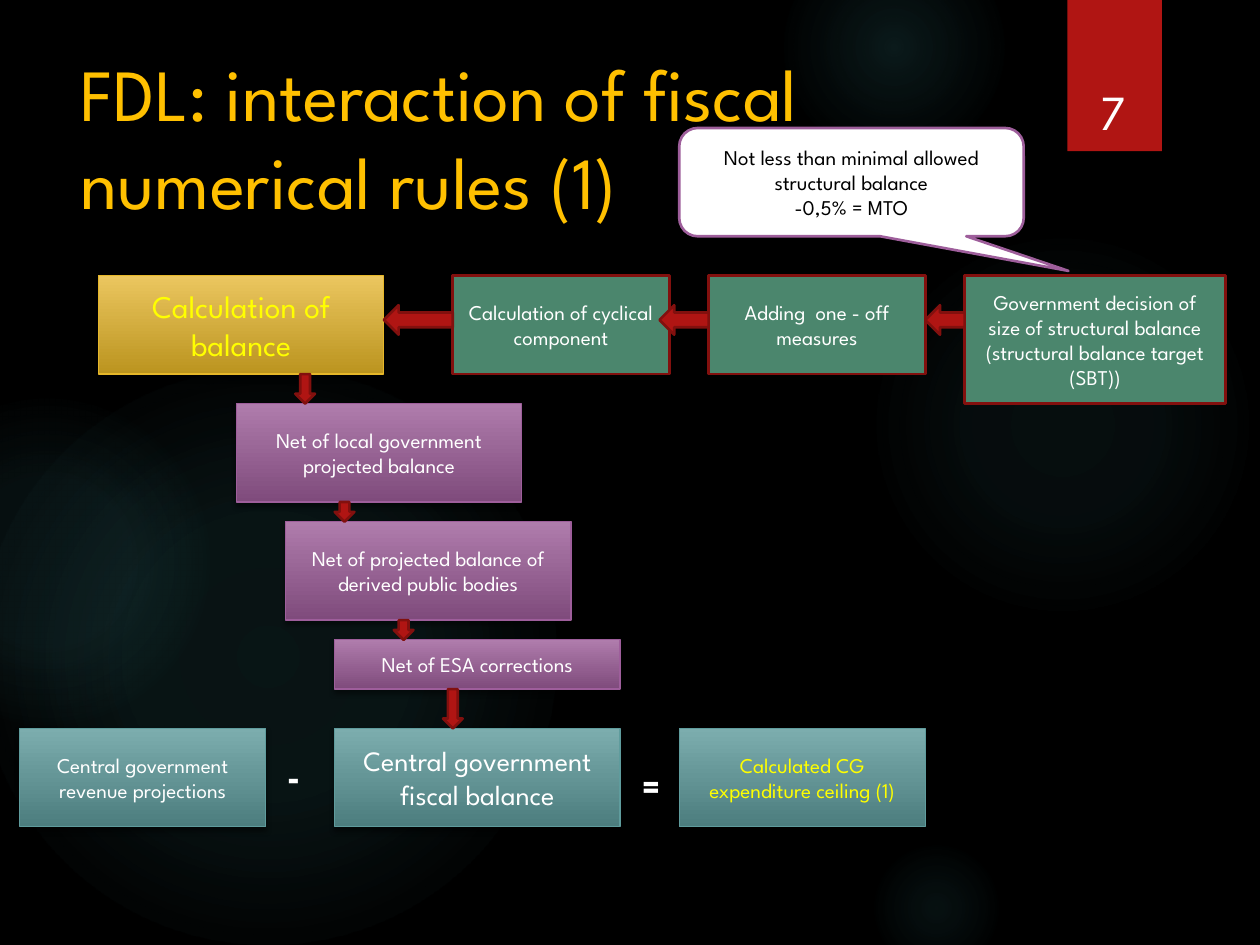
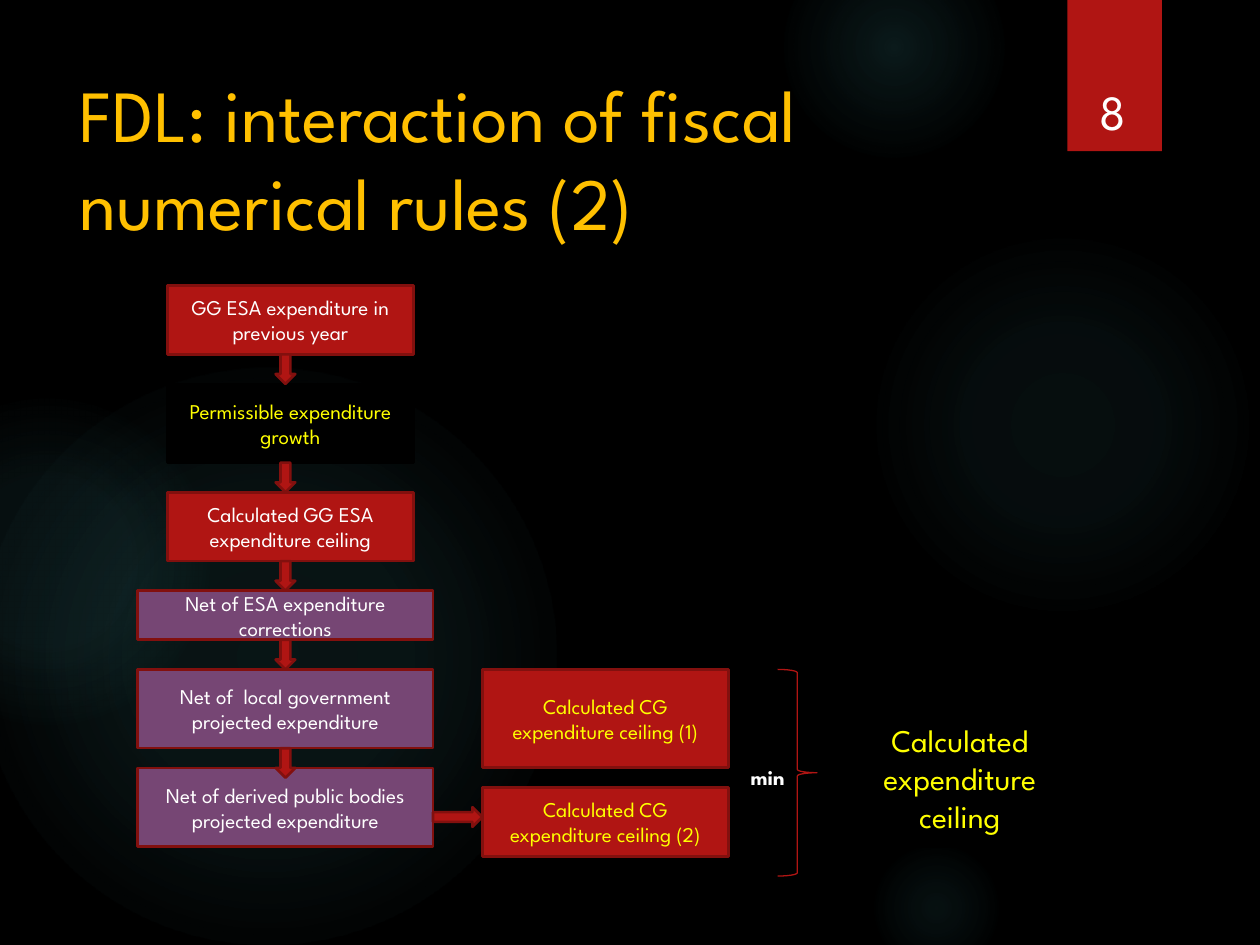
from lxml import etree
from pptx import Presentation
from pptx.dml.color import RGBColor
from pptx.enum.shapes import MSO_SHAPE
from pptx.enum.text import MSO_ANCHOR, PP_ALIGN
from pptx.oxml import parse_xml
from pptx.oxml.ns import nsdecls, qn
from pptx.util import Pt

RECT, OVAL = MSO_SHAPE.RECTANGLE, MSO_SHAPE.OVAL
CALLOUT, BRACE = MSO_SHAPE.ROUNDED_RECTANGULAR_CALLOUT, MSO_SHAPE.RIGHT_BRACE
LEFT_ARROW, RIGHT_ARROW = MSO_SHAPE.LEFT_ARROW, MSO_SHAPE.RIGHT_ARROW
DOWN_ARROW = MSO_SHAPE.DOWN_ARROW
LEFT, CENTER = PP_ALIGN.LEFT, PP_ALIGN.CENTER
TOP, MIDDLE, BOTTOM = MSO_ANCHOR.TOP, MSO_ANCHOR.MIDDLE, MSO_ANCHOR.BOTTOM

FONT = "League Spartan"
BLACK = RGBColor(0x00, 0x00, 0x00)
WHITE = RGBColor(0xFF, 0xFF, 0xFF)
YELLOW = RGBColor(0xFF, 0xFF, 0x00)
AMBER = RGBColor(0xFF, 0xC0, 0x00)
RED = RGBColor(0xB0, 0x15, 0x13)
DARK_RED = RGBColor(0x82, 0x10, 0x0E)
GREEN = RGBColor(0x4B, 0x86, 0x6D)
PLUM = RGBColor(0x76, 0x46, 0x74)
PURPLE = RGBColor(0x9E, 0x5E, 0x9B)
LIGHT_PURPLE = RGBColor(0xAF, 0x7C, 0xAC)
DEEP_PURPLE = RGBColor(0x7F, 0x4B, 0x7C)
GOLD = RGBColor(0xE6, 0xB7, 0x29)
LIGHT_GOLD = RGBColor(0xEB, 0xC6, 0x5F)
DEEP_GOLD = RGBColor(0xBB, 0x94, 0x1F)
TEAL = RGBColor(0x5F, 0x9C, 0x9D)
LIGHT_TEAL = RGBColor(0x7C, 0xAD, 0xAE)
DEEP_TEAL = RGBColor(0x4C, 0x7D, 0x7E)
GLOW = RGBColor(0x50, 0xB9, 0xC1)

# Style: fill (one colour, or top and bottom of a gradient), line, line width
STYLES = {
    "gold": ((LIGHT_GOLD, DEEP_GOLD), GOLD, 0.75),
    "purple": ((LIGHT_PURPLE, DEEP_PURPLE), PURPLE, 0.75),
    "teal": ((LIGHT_TEAL, DEEP_TEAL), TEAL, 0.75),
    "green": ((GREEN,), DARK_RED, 1.5),
    "red": ((RED,), DARK_RED, 1.5),
    "plum": ((PLUM,), DARK_RED, 1.5),
    "black": ((BLACK,), BLACK, 1.5),
    "white": ((WHITE,), PURPLE, 1.5),
}

# Glow: left, top, diameter, then (position, opacity) stops in percent
GLOWS = [
    (496.13, 131.63, 222, ((0, 7), (36, 6), (69, 0))),
    (448, -36, 126, ((0, 14), (36, 7), (73, 0))),
    (496.13, 480, 78, ((0, 9), (36, 5), (66, 0))),
    (-12, 210, 330, ((0, 11), (36, 10), (75, 0))),
    (-66, 228, 186, ((0, 8), (36, 8), (72, 0))),
]

ROW_TOP, BOX_H, BOX_W = 157.5, 56.25, 163.13
CEILING_W, SUM_TOP = 140.63, 416.25

# Box: text, style, left, top, width, height, size, text colour
BALANCE_ROW = [
    ("Calculation of balance", "gold", 56.25, ROW_TOP, BOX_W, BOX_H, 18, YELLOW),
    ("Calculation of cyclical component", "green", 258.75, ROW_TOP, 123.75, BOX_H, 12, WHITE),
    ("Adding  one - off measures", "green", 405, ROW_TOP, 123.75, BOX_H, 12, WHITE),
    ("Government decision of size of structural balance\n(structural balance target (SBT))",
     "green", 551.25, ROW_TOP, 149, 73.13, 12, WHITE),
]
NET_STEPS = [
    ("Net of local government projected balance", "purple", 135, 230.63, BOX_W, BOX_H, 12, WHITE),
    ("Net of projected balance of derived public bodies", "purple",
     163.13, 298.13, BOX_W, BOX_H, 12, WHITE),
    ("Net of ESA corrections", "purple", 191.25, 365.63, BOX_W, 28.13, 12, WHITE),
    ("Central government fiscal balance", "teal", 191.25, SUM_TOP, BOX_W, BOX_H, 16, WHITE),
]
SUM_BOXES = [
    ("Central government revenue projections", "teal",
     11.25, SUM_TOP, CEILING_W, BOX_H, 12, WHITE),
    ("Calculated CG expenditure ceiling (1)", "teal",
     388.13, SUM_TOP, CEILING_W, BOX_H, 12, YELLOW),
]
SIGNS = [("-", 157.5, 427.5), ("=", 360, 433.13)]
MTO_NOTE = "Not less than minimal allowed structural balance\n-0,5% = MTO"
ROW_ARROW_LENGTHS = [39.38, 28.13, 22.5]
STEP_ARROW_LEFTS = [168.75, 191.25, 225, 253.13]

# Expenditure step: text, style, left, width, height, gap below, text colour
EXPENDITURE_STEPS = [
    ("GG ESA expenditure in previous year", "red", 95.63, CEILING_W, 39.38, 16.88, WHITE),
    ("Permissible expenditure growth", "black", 95.63, CEILING_W, 45, 16.88, YELLOW),
    ("Calculated GG ESA expenditure ceiling", "red", 95.63, CEILING_W, 39.38, 16.88, WHITE),
    ("Net of ESA expenditure corrections", "plum", 78.75, 168.75, 28.13, 16.88, WHITE),
    ("Net of  local government projected expenditure", "plum", 78.75, 168.75, 45, 11.25, WHITE),
    ("Net of derived public bodies projected expenditure", "plum", 78.75, 168.75, 45, 0, WHITE),
]
CEILINGS = [
    ("Calculated CG expenditure ceiling (1)", "red",
     275.63, 382.5, CEILING_W, BOX_H, 12, YELLOW),
    ("Calculated CG expenditure ceiling (2)", "red",
     275.63, 450, CEILING_W, 39.38, 12, YELLOW),
    ("Calculated expenditure ceiling", "black", 478.13, 405, CEILING_W, 78.75, 18, YELLOW),
]


def set_all(target, values):
    for name, value in values.items():
        setattr(target, name, value)


def write(shape, text, size, color, align=CENTER, anchor=MIDDLE, bold=False):
    frame = shape.text_frame
    set_all(frame, {"text": text, "word_wrap": True, "vertical_anchor": anchor})
    for paragraph in frame.paragraphs:
        paragraph.alignment = align
        set_all(paragraph.font, {"name": FONT, "size": Pt(size), "bold": bold})
        paragraph.font.color.rgb = color


def add_label(slide, text, place, size, color, **layout):
    label = slide.shapes.add_textbox(*map(Pt, place))
    write(label, text, size, color, **layout)


def add_plain(slide, kind, place):
    shape = slide.shapes.add_shape(kind, *map(Pt, place))
    shape.shadow.inherit = False
    return shape


def drop_shadow(shape):
    effects = shape._element.spPr.find(qn("a:effectLst"))
    shadow = etree.SubElement(effects, qn("a:outerShdw"), blurRad=str(Pt(3)),
                              dist=str(Pt(2)), dir="5400000", rotWithShape="0")
    black = etree.SubElement(shadow, qn("a:srgbClr"), val=str(BLACK))
    etree.SubElement(black, qn("a:alpha"), val="45000")


def add_styled(slide, kind, place, style):
    fills, line, width = STYLES[style]
    shape = add_plain(slide, kind, place)
    if len(fills) == 1:
        shape.fill.solid()
        shape.fill.fore_color.rgb = fills[0]
    else:
        shape.fill.gradient()
        shape.fill.gradient_angle = 270
        for stop, color in zip(shape.fill.gradient_stops, fills):
            stop.color.rgb = color
        drop_shadow(shape)
    shape.line.color.rgb = line
    shape.line.width = Pt(width)
    return shape


def add_box(slide, text, style, left, top, width, height, size, color):
    box = add_styled(slide, RECT, (left, top, width, height), style)
    write(box, text, size, color)


def add_glow(slide, left, top, diameter, stops):
    glow = add_plain(slide, OVAL, (left, top, diameter, diameter))
    glow.line.fill.background()
    glow.fill.background()
    stop_xml = "".join(
        f'<a:gs pos="{position * 1000}"><a:srgbClr val="{GLOW}">'
        f'<a:alpha val="{opacity * 1000}"/></a:srgbClr></a:gs>'
        for position, opacity in stops)
    gradient = parse_xml(
        f'<a:gradFill {nsdecls("a")}><a:gsLst>{stop_xml}</a:gsLst><a:path path="circle">'
        '<a:fillToRect l="50000" t="50000" r="50000" b="50000"/></a:path></a:gradFill>')
    properties = glow._element.spPr
    properties.replace(properties.find(qn("a:noFill")), gradient)


def add_rules_slide(deck, title, title_place, number):
    """Start a slide with the background, number tab and title that all share."""
    slide = deck.slides.add_slide(deck.slide_layouts[6])
    slide.background.fill.solid()
    slide.background.fill.fore_color.rgb = BLACK
    for glow in GLOWS:
        add_glow(slide, *glow)
    tab = add_plain(slide, RECT, (610, 0, 54, 86.4))
    tab.fill.solid()
    tab.fill.fore_color.rgb = RED
    tab.line.fill.background()
    drop_shadow(tab)
    add_label(slide, title, title_place, 42, AMBER, align=LEFT, anchor=TOP)
    add_label(slide, number, (611.3, 23, 49.7, 60.5), 28, WHITE, anchor=BOTTOM)
    return slide


def build_balance_slide(deck):
    slide = add_rules_slide(deck, "FDL: interaction of fiscal numerical rules (1)",
                            (38.9, 23.8, 532.8, 54.7), "7")
    for box in BALANCE_ROW + NET_STEPS + SUM_BOXES:
        add_box(slide, *box)
    for sign, left, top in SIGNS:
        add_label(slide, sign, (left, top, 28.13, 31.5), 20, WHITE,
                  align=LEFT, anchor=TOP, bold=True)

    note = add_styled(slide, CALLOUT, (388.13, 73.13, 196.88, 61.88), "white")
    for index, value in enumerate((0.63, 0.82, 0.17)):
        note.adjustments[index] = value
    write(note, MTO_NOTE, 12, BLACK)

    for source, length in zip(BALANCE_ROW[1:], ROW_ARROW_LENGTHS):
        right = source[2]
        if length == ROW_ARROW_LENGTHS[-1]:
            length = right - 528.75
        add_styled(slide, LEFT_ARROW, (right - length, 174.38, length, 16.88), "red")
    chain = BALANCE_ROW[:1] + NET_STEPS
    for upper, lower, left in zip(chain, chain[1:], STEP_ARROW_LEFTS):
        start = upper[3] + upper[5]
        add_styled(slide, DOWN_ARROW, (left, start, 11.25, lower[3] - start), "red")


def build_expenditure_slide(deck):
    slide = add_rules_slide(deck, "FDL: interaction of fiscal numerical rules (2)",
                            (38.2, 36, 555.8, 110.2), "8")
    top, arrow_tops = 163.13, []
    for text, style, left, width, height, gap, color in EXPENDITURE_STEPS:
        add_box(slide, text, style, left, top, width, height, 12, color)
        arrow_tops.append(top + height)
        top += height + gap
    for arrow_top in arrow_tops[:-1]:
        add_styled(slide, DOWN_ARROW, (157.5, arrow_top, 11.25, 16.88), "red")

    for ceiling in CEILINGS:
        add_box(slide, *ceiling)
    add_styled(slide, RIGHT_ARROW, (247.5, 461.25, 28.13, 11.25), "red")
    brace = add_plain(slide, BRACE, (444.38, 382.5, 22.5, 118.13))
    brace.fill.background()
    brace.line.color.rgb = RED
    brace.line.width = Pt(0.75)
    add_label(slide, "min", (421.88, 433.13, 39.4, 21.8), 12, WHITE,
              align=LEFT, anchor=TOP, bold=True)


def main():
    deck = Presentation()
    deck.slide_width, deck.slide_height = Pt(720), Pt(540)
    build_balance_slide(deck)
    build_expenditure_slide(deck)
    deck.save("out.pptx")


if __name__ == "__main__":
    main()
